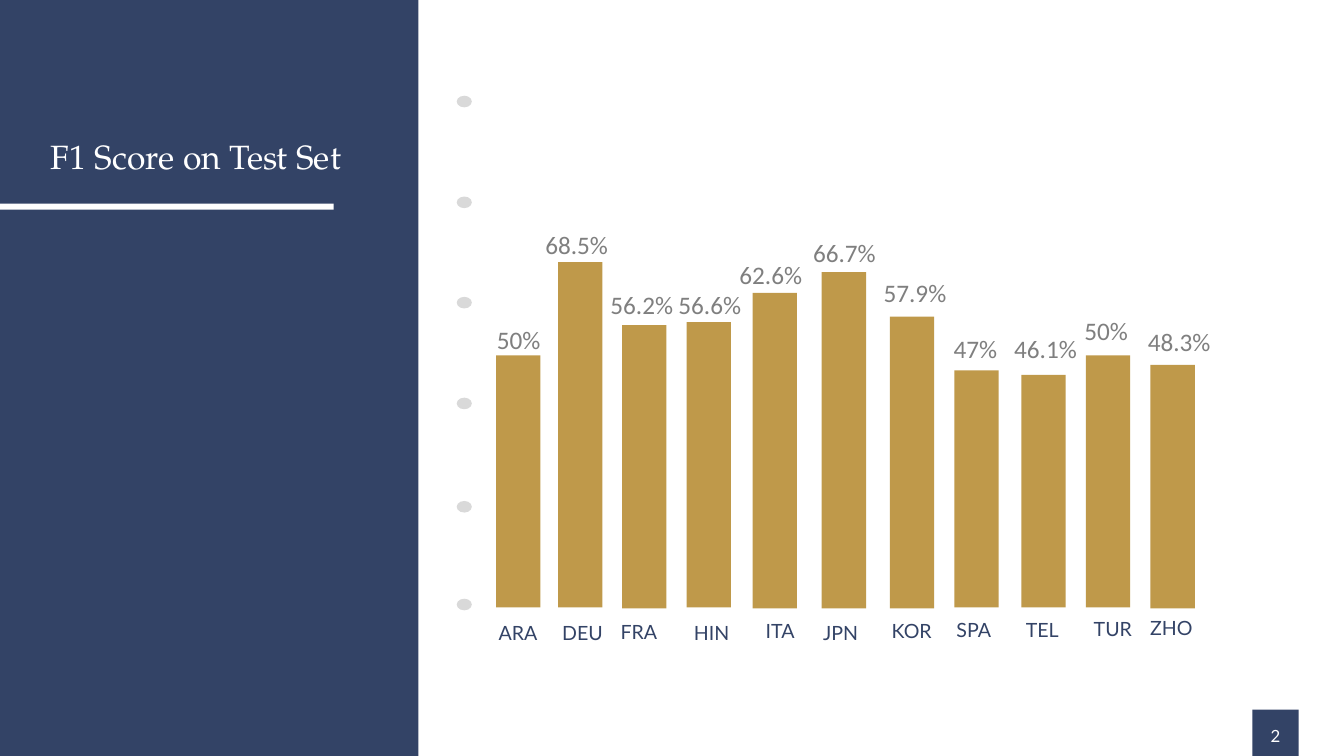
"""Build a slide with a bar diagram of F1 scores per language."""
from typing import Any, NamedTuple

from pptx import Presentation
from pptx.dml.color import RGBColor
from pptx.enum.shapes import MSO_SHAPE
from pptx.enum.text import MSO_ANCHOR, MSO_AUTO_SIZE, PP_ALIGN
from pptx.shapes.autoshape import Shape
from pptx.slide import Slide
from pptx.util import Emu, Pt

RECTANGLE, OVAL = MSO_SHAPE.RECTANGLE, MSO_SHAPE.OVAL
TOP, BOTTOM = MSO_ANCHOR.TOP, MSO_ANCHOR.BOTTOM
LEFT, CENTER = PP_ALIGN.LEFT, PP_ALIGN.CENTER
GROW = MSO_AUTO_SIZE.SHAPE_TO_FIT_TEXT

NAVY = RGBColor(0x33, 0x43, 0x66)
GOLD = RGBColor(0xBF, 0x99, 0x4A)
WHITE = RGBColor(0xFF, 0xFF, 0xFF)
GRAY = RGBColor(0x7F, 0x7F, 0x7F)
LIGHT_GRAY = RGBColor(0xD9, 0xD9, 0xD9)

EMU_PER_PX = 9144
PX_PER_PERCENT = 10
BAR_WIDTH = 88
DOT_LEFT = 906
DOT_TOPS = (190, 390, 589, 789, 994, 1188)


class Box(NamedTuple):
    left: int
    top: int
    width: int
    height: int


class Style(NamedTuple):
    font: str
    size: int
    color: RGBColor
    alignment: PP_ALIGN = LEFT
    anchor: MSO_ANCHOR = TOP
    wrap: bool = True


class Bar(NamedTuple):
    language: str
    score: float
    left: int
    bottom: int
    name_left: int
    name_top: int
    score_left: int
    score_top: int


TITLE = Style("TeX Gyre Pagella", 48, WHITE, anchor=BOTTOM)
PAGE_NUMBER = Style("Lato", 24, WHITE, CENTER)
NAME = Style("Lato", 28, NAVY, CENTER)
SCORE = Style("Calibri", 36, GRAY, wrap=False)

BARS = (
    Bar("ARA", 50, 984, 1205, 921, 1227, 976, 639),
    Bar("DEU", 68.5, 1107, 1205, 1049, 1227, 1072, 450),
    Bar("FRA", 56.2, 1234, 1207, 1161, 1226, 1201, 569),
    Bar("HIN", 56.6, 1362, 1205, 1305, 1227, 1336, 569),
    Bar("ITA", 62.6, 1493, 1207, 1441, 1224, 1457, 509),
    Bar("JPN", 66.7, 1630, 1207, 1561, 1227, 1603, 465),
    Bar("KOR", 57.9, 1765, 1207, 1702, 1223, 1743, 545),
    Bar("SPA", 47, 1893, 1205, 1825, 1222, 1882, 657),
    Bar("TEL", 46.1, 2026, 1205, 1961, 1222, 2002, 656),
    Bar("TUR", 50, 2154, 1205, 2101, 1220, 2141, 621),
    Bar("ZHO", 48.3, 2282, 1207, 2217, 1218, 2267, 643),
)


def px(length: int) -> Emu:
    return Emu(length * EMU_PER_PX)


def set_values(target: Any, values: dict[str, Any]) -> None:
    for name, value in values.items():
        setattr(target, name, value)


def draw_shape(slide: Slide, kind: MSO_SHAPE, box: Box, color: RGBColor) -> None:
    shape = slide.shapes.add_shape(kind, *map(px, box))
    shape.shadow.inherit = False
    shape.fill.solid()
    shape.fill.fore_color.rgb = color
    shape.line.fill.background()


def draw_text(slide: Slide, text: str, box: Box, style: Style) -> Shape:
    shape = slide.shapes.add_textbox(*map(px, box))
    frame = shape.text_frame
    set_values(frame, {"word_wrap": style.wrap, "auto_size": GROW,
                       "vertical_anchor": style.anchor})
    if style.anchor == BOTTOM:
        frame.auto_size = MSO_AUTO_SIZE.NONE
    paragraph = frame.paragraphs[0]
    paragraph.alignment = style.alignment
    run = paragraph.add_run()
    run.text = text
    set_values(run.font, {"name": style.font, "size": Pt(style.size)})
    run.font.color.rgb = style.color
    return shape


def draw_bar(slide: Slide, bar: Bar) -> None:
    height = round(bar.score * PX_PER_PERCENT)
    draw_shape(slide, RECTANGLE,
               Box(bar.left, bar.bottom - height, BAR_WIDTH, height), GOLD)
    draw_text(slide, bar.language, Box(bar.name_left, bar.name_top, 213, 57), NAME)
    score_width = 107 if bar.score == int(bar.score) else 146
    draw_text(slide, f"{bar.score:g}%",
              Box(bar.score_left, bar.score_top, score_width, 71), SCORE)


def draw_page_number(slide: Slide) -> None:
    draw_shape(slide, RECTANGLE, Box(2484, 1408, 92, 92), NAVY)
    frame = draw_text(slide, "2", Box(2492, 1408, 76, 76), PAGE_NUMBER).text_frame
    set_values(frame, {"margin_left": px(24), "margin_right": px(24),
                       "margin_top": px(12), "margin_bottom": px(12)})
    set_values(frame.paragraphs[0], {"line_spacing": Pt(43), "space_before": Pt(5)})


def main() -> None:
    presentation = Presentation()
    set_values(presentation, {"slide_width": px(2666), "slide_height": px(1500)})
    slide = presentation.slides.add_slide(presentation.slide_layouts[6])
    draw_shape(slide, RECTANGLE, Box(0, 0, 830, 1500), NAVY)
    draw_text(slide, "F1 Score on Test Set", Box(91, 182, 602, 172), TITLE)
    draw_page_number(slide)
    draw_shape(slide, RECTANGLE, Box(0, 404, 662, 12), WHITE)
    for top in DOT_TOPS:
        draw_shape(slide, OVAL, Box(DOT_LEFT, top, 30, 23), LIGHT_GRAY)
    for bar in BARS:
        draw_bar(slide, bar)
    presentation.save("out.pptx")


if __name__ == "__main__":
    main()
